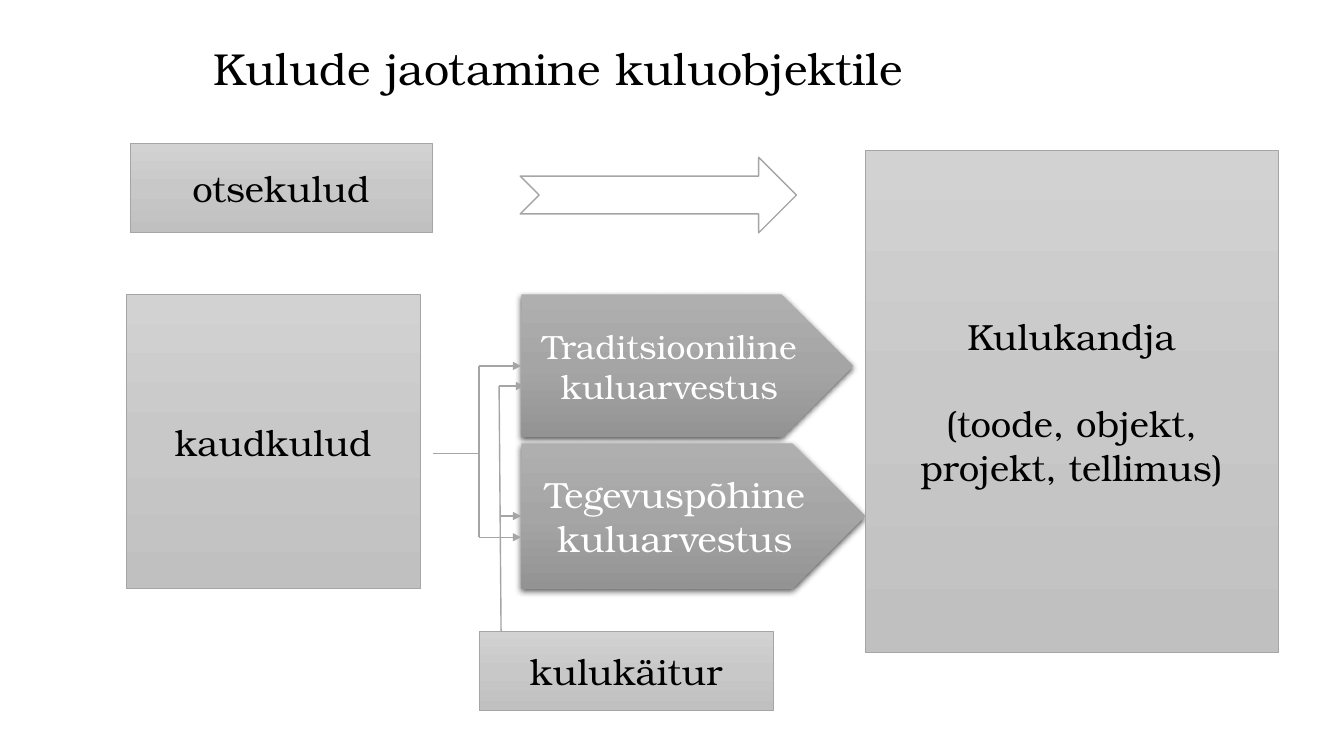
from copy import deepcopy

from lxml.etree import SubElement
from pptx import Presentation
from pptx.dml.color import RGBColor
from pptx.enum.shapes import MSO_CONNECTOR as Connector, MSO_SHAPE as Shape
from pptx.enum.text import MSO_ANCHOR as Anchor, PP_ALIGN as Align
from pptx.oxml.ns import qn
from pptx.util import Emu, Pt

EMU_PER_PX = 9144  # 100 px to the inch
FONT = "TeX Gyre Bonum"
BLACK, WHITE, GREY = "000000", "FFFFFF", "A5A5A5"
LIGHT_GRADIENT = ("D2D2D2", "C8C8C8", "C0C0C0")
DARK_GRADIENT = ("AFAFAF", "A5A5A5", "939393")


def px(length):
    return Emu(length * EMU_PER_PX)


def rgb(color):
    return RGBColor.from_string(color)


def set_values(target, values):
    for name, value in values.items():
        setattr(target, name, value)


def write_text(shape, lines, size, color, **paragraph_format):
    """Write one paragraph per line, a blank line's height apart."""
    frame = shape.text_frame
    set_values(frame, {"word_wrap": True, "vertical_anchor": Anchor.MIDDLE})
    for index, line in enumerate(lines):
        paragraph = frame.add_paragraph() if index else frame.paragraphs[0]
        set_values(paragraph, paragraph_format)
        if index:
            paragraph.space_before = Pt(size * 1.2)
        run = paragraph.add_run()
        run.text = line
        set_values(run.font, {"name": FONT, "size": Pt(size)})
        run.font.color.rgb = rgb(color)


def fill_gradient(shape, colors):
    """Fill from top to bottom with three evenly spaced colours."""
    fill = shape.fill
    fill.gradient()
    fill.gradient_angle = 270
    stop_list = shape._element.spPr.find(".//" + qn("a:gsLst"))
    stop_list.insert(1, deepcopy(stop_list[0]))
    for stop, color, position in zip(fill.gradient_stops, colors, (0, 0.5, 1)):
        stop.color.rgb = rgb(color)
        stop.position = position


def set_outline(line, width):
    line.color.rgb = rgb(GREY)
    line.width = Pt(width)


def add_shadow(shape):
    effects = shape._element.spPr.find(qn("a:effectLst"))
    shadow = SubElement(effects, qn("a:outerShdw"), blurRad=str(Pt(4.5)),
                        dist=str(Pt(1.5)), dir="5400000", algn="ctr", rotWithShape="0")
    color = SubElement(shadow, qn("a:srgbClr"), val=BLACK)
    SubElement(color, qn("a:alpha"), val="63000")


def add_plain_shape(slide, kind, box):
    shape = slide.shapes.add_shape(kind, *map(px, box))
    shape.shadow.inherit = False
    return shape


def add_title(slide, text, box):
    title = slide.shapes.add_textbox(*map(px, box))
    write_text(title, [text], 32, BLACK, line_spacing=0.9)


def add_cost_box(slide, lines, box):
    shape = add_plain_shape(slide, Shape.RECTANGLE, box)
    fill_gradient(shape, LIGHT_GRADIENT)
    set_outline(shape.line, 0.5)
    write_text(shape, lines, 26, BLACK, alignment=Align.CENTER)


def add_method(slide, text, size, box):
    shape = add_plain_shape(slide, Shape.PENTAGON, box)
    fill_gradient(shape, DARK_GRADIENT)
    shape.line.fill.background()
    add_shadow(shape)
    write_text(shape, [text], size, WHITE, alignment=Align.CENTER)
    return shape


def add_direct_arrow(slide, box):
    shape = add_plain_shape(slide, Shape.NOTCHED_RIGHT_ARROW, box)
    shape.fill.solid()
    shape.fill.fore_color.rgb = rgb(WHITE)
    set_outline(shape.line, 1)


def add_line(slide, ends, arrow=False, target=None):
    connector = slide.shapes.add_connector(Connector.STRAIGHT, *map(px, ends))
    set_outline(connector.line, 1)
    properties = connector._element.spPr
    if arrow:
        SubElement(properties.find(qn("a:ln")), qn("a:tailEnd"), type="triangle")
    SubElement(properties, qn("a:effectLst"))
    if target is not None:
        connector.end_connect(target, 1)


def main():
    presentation = Presentation()
    set_values(presentation, {"slide_width": px(1333), "slide_height": px(750)})
    slide = presentation.slides.add_slide(presentation.slide_layouts[6])

    add_title(slide, "Kulude jaotamine kuluobjektile", (202, 14, 892, 112))

    # Costs and cost driver
    add_cost_box(slide, ["otsekulud"], (129, 142, 300, 89))
    add_cost_box(slide, ["kaudkulud"], (125, 292, 292, 292))
    add_cost_box(slide, ["kulukäitur"], (475, 626, 292, 79))

    # Ways to the cost object
    add_direct_arrow(slide, (516, 156, 274, 75))
    traditional = add_method(slide, "Traditsiooniline kuluarvestus", 24,
                             (517, 292, 329, 142))
    activity_based = add_method(slide, "Tegevuspõhine kuluarvestus", 26,
                                (517, 440, 341, 144))

    # Cost object
    add_cost_box(slide, ["Kulukandja", "(toode, objekt, projekt, tellimus)"],
                 (858, 149, 410, 498))

    # Branch from the indirect costs
    add_line(slide, (429, 450, 475, 450))
    add_line(slide, (475, 363, 475, 533))
    add_line(slide, (475, 363, 517, 363), arrow=True, target=traditional)
    add_line(slide, (475, 533, 517, 533), arrow=True)

    # Branch from the cost driver
    add_line(slide, (497, 626, 495, 383))
    add_line(slide, (495, 383, 520, 383), arrow=True)
    add_line(slide, (496, 512, 517, 512), arrow=True, target=activity_based)

    presentation.save("out.pptx")


if __name__ == "__main__":
    main()
